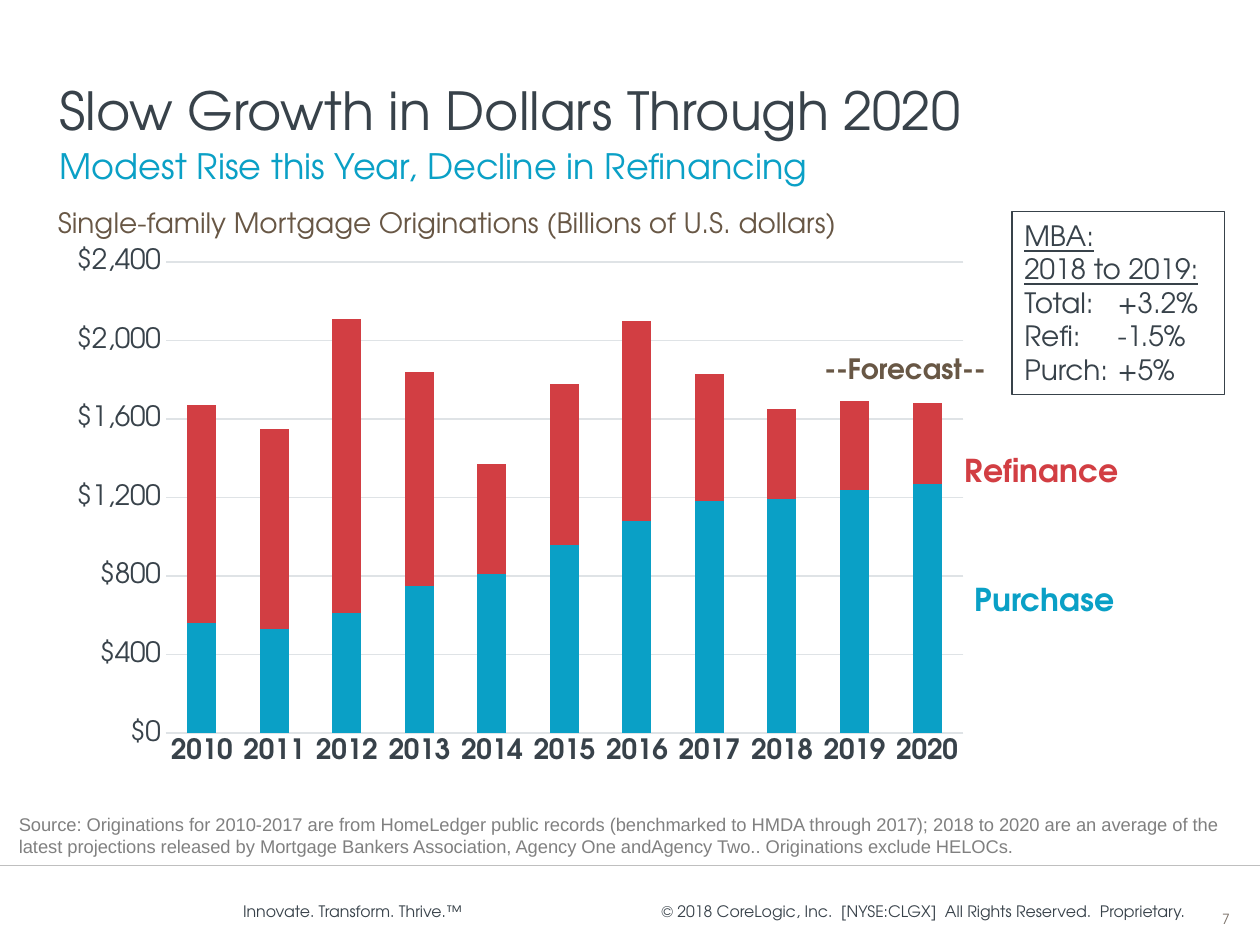
from lxml import etree
from pptx import Presentation
from pptx.chart.data import CategoryChartData
from pptx.dml.color import RGBColor
from pptx.enum.chart import XL_CHART_TYPE, XL_TICK_MARK
from pptx.enum.shapes import MSO_CONNECTOR
from pptx.enum.text import MSO_ANCHOR, PP_ALIGN
from pptx.oxml import parse_xml
from pptx.oxml.ns import nsdecls, qn
from pptx.util import Cm, Pt

SLATE = RGBColor(0x38, 0x42, 0x4A)
BLUE = RGBColor(0x0A, 0xA0, 0xC6)
RED = RGBColor(0xD2, 0x3E, 0x43)
BROWN = RGBColor(0x68, 0x57, 0x45)
TAUPE = RGBColor(0x79, 0x6F, 0x66)
GRAY = RGBColor(0x80, 0x80, 0x80)
RULE_GRAY = RGBColor(0xBF, 0xBF, 0xBF)
GRID_GRAY = RGBColor(0xDF, 0xE3, 0xE6)
WHITE = RGBColor(0xFF, 0xFF, 0xFF)
FONT = "TeX Gyre Adventor"

prs = Presentation()
prs.slide_width = Cm(25.4)
prs.slide_height = Cm(19.05)
slide = prs.slides.add_slide(prs.slide_layouts[6])


def add_text(place, lines, size, color, bold=False, font=FONT, align=PP_ALIGN.LEFT,
             anchor=MSO_ANCHOR.TOP, insets=(0.13, 0.13, 0.13, 0.13), wrap=True,
             underlined=0, tab=None):
    box = slide.shapes.add_textbox(*[Cm(length) for length in place])
    frame = box.text_frame
    frame.word_wrap = wrap
    frame.vertical_anchor = anchor
    frame.margin_left, frame.margin_top, frame.margin_right, frame.margin_bottom = [
        Cm(inset) for inset in insets]
    for index, line in enumerate(lines):
        paragraph = frame.paragraphs[0] if index == 0 else frame.add_paragraph()
        paragraph.alignment = align
        if tab and "\t" in line:
            stops = etree.SubElement(paragraph._p.get_or_add_pPr(), qn("a:tabLst"))
            etree.SubElement(stops, qn("a:tab"), pos=str(Cm(tab)), algn="l")
        run = paragraph.add_run()
        run.text = line
        run.font.name = font
        run.font.size = Pt(size)
        run.font.bold = bold
        run.font.color.rgb = color
        if index < underlined:
            run.font.underline = True
    return box


FOOTER_INSETS = (0, 0.13, 0, 0.13)
LABEL_INSETS = (0.25, 0.13, 0.25, 0.13)

add_text((12.78, 17.83, 11.1, 1.07),
         ["© 2018 CoreLogic, Inc.  [NYSE:CLGX]  All Rights Reserved.  Proprietary."],
         9, SLATE, align=PP_ALIGN.RIGHT, anchor=MSO_ANCHOR.MIDDLE, insets=FOOTER_INSETS)
add_text((4.9, 17.83, 5, 1.07), ["Innovate. Transform. Thrive.™"],
         9, SLATE, anchor=MSO_ANCHOR.MIDDLE, insets=FOOTER_INSETS)

footer_rule = slide.shapes.add_connector(
    MSO_CONNECTOR.STRAIGHT, Cm(0), Cm(17.45), Cm(25.4), Cm(17.45))
footer_rule.line.color.rgb = RULE_GRAY
footer_rule.line.width = Pt(0.75)
etree.SubElement(footer_rule._element.spPr, qn("a:effectLst"))

originations = CategoryChartData(number_format="General")
originations.categories = [str(year) for year in range(2010, 2021)]
originations.add_series(
    "Purchase", (560, 530, 610, 750, 810, 960, 1080, 1180, 1190, 1240, 1270))
originations.add_series(
    "Refinance", (1110, 1020, 1500, 1090, 560, 820, 1020, 650, 460, 450, 410))
chart = slide.shapes.add_chart(
    XL_CHART_TYPE.COLUMN_STACKED, Cm(0.69), Cm(4.88), Cm(18.92), Cm(11.1),
    originations).chart
chart.has_title = False
chart.has_legend = False
chart.font.name = FONT
chart.font.size = Pt(10)
chart.font.color.rgb = SLATE

plot = chart.plots[0]
plot.vary_by_categories = False
plot.gap_width = 150
plot.overlap = 100
for series, color in zip(plot.series, (BLUE, RED)):
    series.format.fill.solid()
    series.format.fill.fore_color.rgb = color

years, dollars = chart.category_axis, chart.value_axis
for axis in (years, dollars):
    axis.major_tick_mark = XL_TICK_MARK.NONE
    axis.minor_tick_mark = XL_TICK_MARK.NONE
    axis.tick_labels.font.name = FONT
    axis.tick_labels.font.size = Pt(16)
    axis.tick_labels.font.bold = axis is years
    axis.tick_labels.font.color.rgb = SLATE
dollars.minimum_scale = 0
dollars.maximum_scale = 2400
dollars.major_unit = 400
dollars.tick_labels.number_format = '"$"#,##0'
dollars.tick_labels.number_format_is_linked = False
dollars.format.line.fill.background()
for line in (years.format.line, dollars.major_gridlines.format.line):
    line.color.rgb = GRID_GRAY
    line.width = Pt(0.75)

plot_area = chart._chartSpace.chart.plotArea
for layout in plot_area.findall(qn("c:layout")):
    plot_area.remove(layout)
plot_area.insert(0, parse_xml(
    f'<c:layout {nsdecls("c")}><c:manualLayout><c:layoutTarget val="inner"/>'
    '<c:xMode val="edge"/><c:yMode val="edge"/><c:x val="0.14"/><c:y val="0.036"/>'
    '<c:w val="0.85"/><c:h val="0.856"/></c:manualLayout></c:layout>'))

add_text((1.04, 4.01, 21.59, 1.04),
         ["Single-family Mortgage Originations (Billions of U.S. dollars)"], 16, BROWN)
add_text((19.4, 11.56, 3.38, 1.02), ["Purchase"], 18, BLUE, bold=True,
         insets=LABEL_INSETS, wrap=False)
refinance_label = add_text((19.2, 8.97, 3.63, 1.02), ["Refinance"], 18, RED, bold=True,
                           insets=LABEL_INSETS, wrap=False)
refinance_label.fill.solid()
refinance_label.fill.fore_color.rgb = WHITE

forecast_label = add_text((16.1, 6.96, 4.29, 0.94), ["--Forecast--"], 16, BROWN,
                          bold=True, align=PP_ALIGN.CENTER, insets=LABEL_INSETS)
growth_box = add_text(
    (20.4, 4.27, 4.29, 3.68),
    ["MBA:", "2018 to 2019:", "Total:\t+3.2%", "Refi:\t-1.5%", "Purch:\t+5%"],
    16, SLATE, insets=LABEL_INSETS, underlined=2, tab=1.88)
for box, color in ((forecast_label, WHITE), (growth_box, SLATE)):
    box.line.color.rgb = color
    box.line.width = Pt(0.75)

add_text((24.03, 17.68, 1.37, 1.02), ["7"], 8, TAUPE, align=PP_ALIGN.CENTER,
         anchor=MSO_ANCHOR.BOTTOM, insets=(0, 0.13, 0, 0))
add_text((1.07, 0.43, 23.7, 2.54), ["Slow Growth in Dollars Through 2020"], 30, SLATE,
         anchor=MSO_ANCHOR.BOTTOM)
add_text((1.07, 2.79, 23.7, 1.45), ["Modest Rise this Year, Decline in Refinancing"],
         20, BLUE)
add_text((0.18, 16.13, 24.92, 1.4),
         ["Source: Originations for 2010-2017 are from HomeLedger public records "
          "(benchmarked to HMDA through 2017); 2018 to 2020 are an average of the latest "
          "projections released by Mortgage Bankers Association, Agency One and"
          "Agency Two.. Originations exclude HELOCs."],
         10.5, GRAY, font="Arial", anchor=MSO_ANCHOR.MIDDLE, insets=(0.2, 0.1, 0.2, 0.1))

prs.save("out.pptx")
